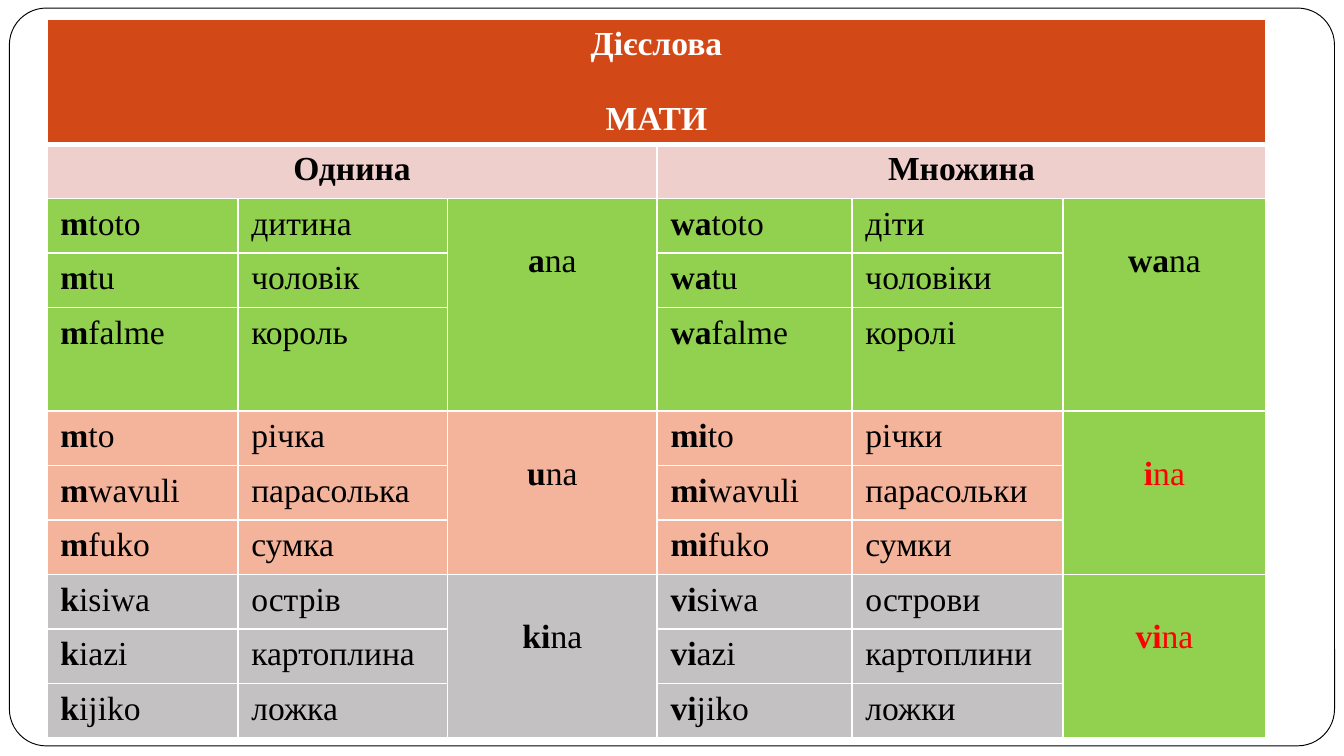
from dataclasses import dataclass

from lxml.etree import SubElement
from pptx import Presentation
from pptx.dml.color import RGBColor
from pptx.enum.shapes import MSO_SHAPE as Shape
from pptx.enum.text import PP_ALIGN as Align
from pptx.oxml.ns import qn
from pptx.slide import Slide
from pptx.table import Table, _Cell as Cell
from pptx.util import Inches, Pt

COLORS = {
    "white": "FFFFFF", "black": "000000", "red": "FF0000", "title": "D34817",
    "number": "EFCFCC", "green": "92D050", "peach": "F4B39B", "grey": "C3C1C1",
}
FONT = {"name": "Times New Roman", "size": Pt(18)}
PAGE_WIDTH = 10
PAGE_HEIGHT = PAGE_WIDTH * 9 / 16
COLUMN_WIDTHS = [1.42, 1.56, 1.56, 1.45, 1.57, 1.51]
WORD_ROW = 3.65 / 9
ROW_HEIGHTS = [0.93] + [WORD_ROW] * 3 + [0.77] + [WORD_ROW] * 6
GROUP_SIZE = 3


@dataclass
class Noun:
    stem: str
    singular: str
    plural: str


@dataclass
class NounClass:
    fill: str
    prefixes: tuple[str, str]
    verbs: tuple[str, str]
    plural_verb_color: str
    nouns: list[Noun]


NOUN_CLASSES = [
    NounClass("green", ("m", "wa"), ("a", "wa"), "black", [
        Noun("toto", "дитина", "діти"),
        Noun("tu", "чоловік", "чоловіки"),
        Noun("falme", "король", "королі")]),
    NounClass("peach", ("m", "mi"), ("u", "i"), "red", [
        Noun("to", "річка", "річки"),
        Noun("wavuli", "парасолька", "парасольки"),
        Noun("fuko", "сумка", "сумки")]),
    NounClass("grey", ("ki", "vi"), ("ki", "vi"), "red", [
        Noun("siwa", "острів", "острови"),
        Noun("azi", "картоплина", "картоплини"),
        Noun("jiko", "ложка", "ложки")]),
]


def rgb(name: str) -> RGBColor:
    return RGBColor.from_string(COLORS[name])


def write(cell: Cell, parts: list[tuple[str, bool]], color: str = "black",
          align: Align = Align.LEFT, new_para: bool = False) -> None:
    frame = cell.text_frame
    para = frame.add_paragraph() if new_para else frame.paragraphs[0]
    para.alignment = align
    if new_para:
        para.space_before = Pt(20)
    for text, bold in parts:
        span = para.add_run()
        span.text = text
        for key, value in {**FONT, "bold": bold}.items():
            setattr(span.font, key, value)
        span.font.color.rgb = rgb(color)


def style_cell(cell: Cell, fill: str, top: float = 1, bottom: float = 1) -> None:
    properties = cell._tc.get_or_add_tcPr()
    for side, width in {"L": 1, "R": 1, "T": top, "B": bottom}.items():
        line = SubElement(properties, qn(f"a:ln{side}"), w=str(Pt(width)))
        solid = SubElement(line, qn("a:solidFill"))
        SubElement(solid, qn("a:srgbClr"), val=COLORS["white"])
    cell.fill.solid()
    cell.fill.fore_color.rgb = rgb(fill)


def draw_frame(page: Slide) -> None:
    box = page.shapes.add_shape(Shape.ROUNDED_RECTANGLE, Inches(0.07), Inches(0.06),
                                Inches(9.86), Inches(5.49))
    box.adjustments[0] = 0.05
    box.shadow.inherit = False
    box.fill.solid()
    box.fill.fore_color.rgb = rgb("white")
    box.line.color.rgb = rgb("black")
    box.line.width = Pt(0.5)


def add_grid(page: Slide) -> Table:
    grid = page.shapes.add_table(
        len(ROW_HEIGHTS), len(COLUMN_WIDTHS), Inches(0.35), Inches(0.14),
        Inches(sum(COLUMN_WIDTHS)), Inches(sum(ROW_HEIGHTS))).table
    grid.first_row = grid.horz_banding = False
    for column, width in zip(grid.columns, COLUMN_WIDTHS):
        column.width = Inches(width)
    for row, height in zip(grid.rows, ROW_HEIGHTS):
        row.height = Inches(height)
    return grid


def draw_headings(grid: Table) -> None:
    for column in range(len(COLUMN_WIDTHS)):
        style_cell(grid.cell(0, column), "title", bottom=3)
        style_cell(grid.cell(1, column), "number", top=3)
    title = grid.cell(0, 0)
    title.merge(grid.cell(0, len(COLUMN_WIDTHS) - 1))
    write(title, [("Дієслова", True)], "white", Align.CENTER)
    write(title, [("МАТИ", True)], "white", Align.CENTER, new_para=True)
    for column, heading in ((0, "Однина"), (3, "Множина")):
        cell = grid.cell(1, column)
        cell.merge(grid.cell(1, column + 2))
        write(cell, [(heading, True)], align=Align.CENTER)


def draw_noun_class(grid: Table, top: int, group: NounClass) -> None:
    verb_fills = (group.fill, "green")
    verb_colors = ("black", group.plural_verb_color)
    for side, prefix in enumerate(group.prefixes):
        left = side * 3
        for row, noun in enumerate(group.nouns, top):
            for offset, fill in enumerate((group.fill, group.fill, verb_fills[side])):
                style_cell(grid.cell(row, left + offset), fill)
            bold = prefix[0] if prefix == "ki" else prefix
            rest = prefix[len(bold):] + noun.stem
            write(grid.cell(row, left), [(bold, True), (rest, False)])
            meaning = (noun.singular, noun.plural)[side]
            write(grid.cell(row, left + 1), [(meaning, False)])
        verb = grid.cell(top, left + 2)
        verb.merge(grid.cell(top + GROUP_SIZE - 1, left + 2))
        verb.margin_top = Inches(0.33)
        write(verb, [(group.verbs[side], True), ("na", False)],
              verb_colors[side], Align.CENTER)


def main() -> None:
    deck = Presentation()
    deck.slide_width, deck.slide_height = Inches(PAGE_WIDTH), Inches(PAGE_HEIGHT)
    page = deck.slides.add_slide(deck.slide_layouts[6])
    draw_frame(page)
    grid = add_grid(page)
    draw_headings(grid)
    for index, group in enumerate(NOUN_CLASSES):
        draw_noun_class(grid, 2 + index * GROUP_SIZE, group)
    deck.save("out.pptx")


if __name__ == "__main__":
    main()
